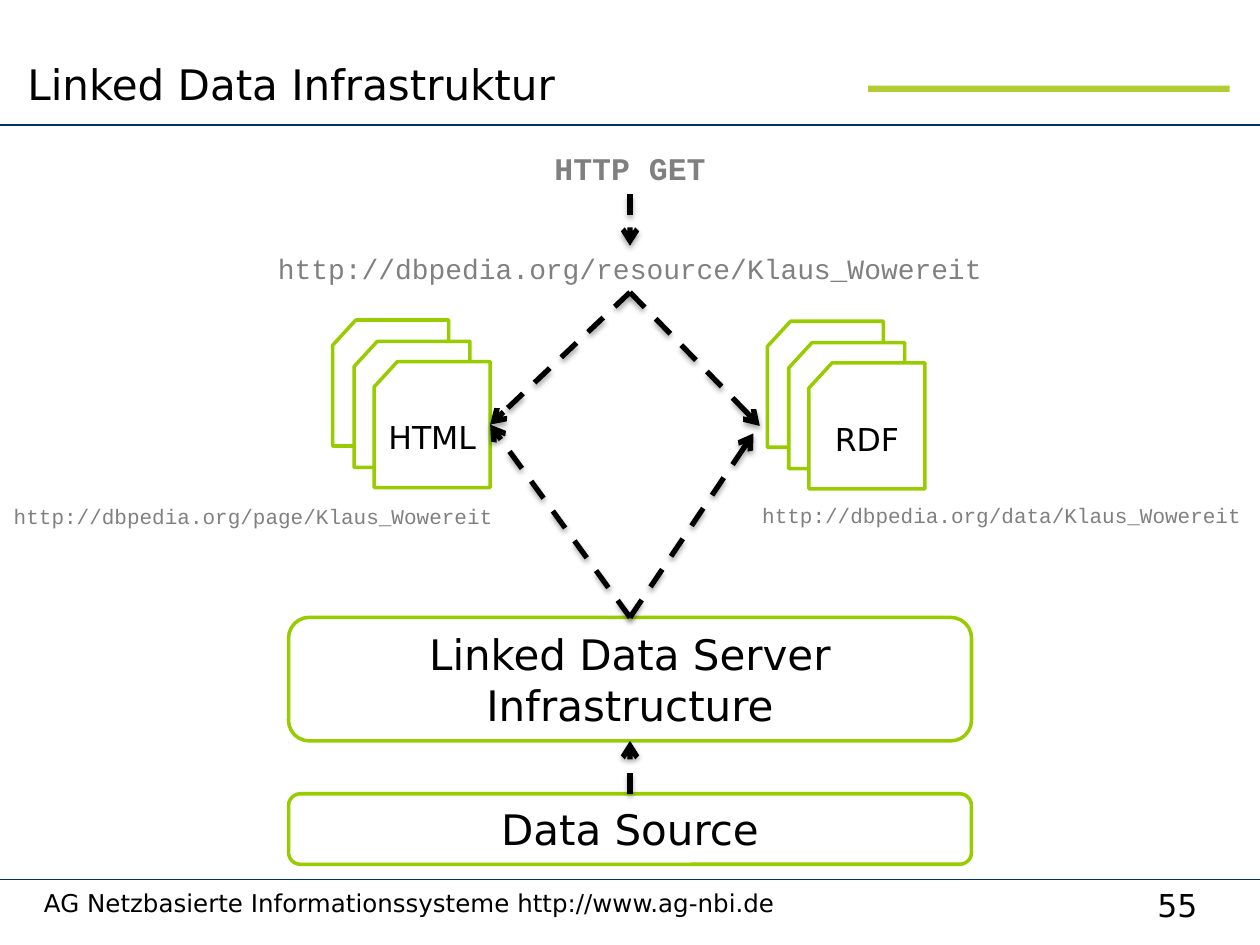
from lxml.etree import SubElement
from pptx import Presentation
from pptx.dml.color import RGBColor
from pptx.enum.dml import MSO_LINE
from pptx.enum.shapes import MSO_CONNECTOR, MSO_SHAPE
from pptx.enum.text import MSO_ANCHOR, PP_ALIGN
from pptx.oxml.ns import qn
from pptx.util import Pt

SCALE = 9144  # EMU per px, 100 px to the inch
COLORS = {"white": "FFFFFF", "black": "000000", "gray": "808080",
          "navy": "003366", "green": "99CC00", "lime": "B2CC33"}
SANS, MONO = "DejaVu Sans", "Courier New"
TOP, LEFT, BOTTOM, RIGHT = range(4)


def px(*sizes):
    return [size * SCALE for size in sizes]


def color(name):
    return RGBColor.from_string(COLORS[name])


class Canvas:
    def __init__(self, slide):
        self.shapes = slide.shapes

    def letter(self, shape, text, size, font=SANS, ink="black",
               align=PP_ALIGN.CENTER, anchor=MSO_ANCHOR.MIDDLE, bold=False):
        frame = shape.text_frame
        frame.word_wrap = True
        frame.vertical_anchor = anchor
        para = frame.paragraphs[0]
        para.text = text
        para.alignment = align
        para.font.name = font
        para.font.size = Pt(size)
        para.font.bold = bold
        para.font.color.rgb = color(ink)

    def label(self, box, text, size, anchor=MSO_ANCHOR.TOP, **style):
        shape = self.shapes.add_textbox(*px(*box))
        self.letter(shape, text, size, anchor=anchor, **style)
        return shape

    def block(self, kind, box, text="", size=24, fill="white", edge="green"):
        shape = self.shapes.add_shape(kind, *px(*box))
        shape.shadow.inherit = False
        shape.fill.solid()
        shape.fill.fore_color.rgb = color(fill)
        if edge:
            shape.line.color.rgb = color(edge)
            shape.line.width = Pt(2)
        else:
            shape.line.fill.background()
        if text:
            self.letter(shape, text, size)
        return shape

    def stack(self, left, top, text):
        """Draw three overlapping cards and return the front one."""
        for back in (33, 16, 0):
            card = self.block(MSO_SHAPE.FLOWCHART_CARD,
                              (left - back, top - back, 92, 100),
                              "" if back else text, 18)
        return card

    def line(self, ends, ink, width):
        """Draw a straight line and return it with its empty effect list."""
        line = self.shapes.add_connector(MSO_CONNECTOR.STRAIGHT, *px(*ends))
        line.line.color.rgb = color(ink)
        line.line.width = Pt(width)
        props = line.line._get_or_add_ln().getparent()
        return line, SubElement(props, qn("a:effectLst"))

    def arrow(self, start, side, end, goal=None):
        """Join start to a (x, y) point, or to side goal of a shape."""
        tip = end if goal is None else (0, 0)
        line, effects = self.line((0, 0, *tip), "black", 3)
        line.begin_connect(start, side)
        if goal is not None:
            line.end_connect(end, goal)
        line.line.dash_style = MSO_LINE.DASH
        SubElement(line.line._get_or_add_ln(), qn("a:tailEnd"), type="arrow")
        shadow = SubElement(effects, qn("a:outerShdw"), blurRad=str(Pt(3.1)),
                            dist=str(Pt(1.8)), dir="5400000", rotWithShape="0")
        tint = SubElement(shadow, qn("a:srgbClr"), val=COLORS["black"])
        SubElement(tint, qn("a:alpha"), val="35000")


def main():
    deck = Presentation()
    deck.slide_width, deck.slide_height = px(1000, 750)
    page = Canvas(deck.slides.add_slide(deck.slide_layouts[6]))

    page.block(MSO_SHAPE.RECTANGLE, (689, 68, 287, 5), fill="lime", edge=None)
    for y in (698, 99):
        page.line((0, y, 1000, y), "navy", 1)
    page.label((894, 698, 81, 40), "55", 18)
    page.label((25, 700, 869, 33),
               "AG Netzbasierte Informationssysteme http://www.ag-nbi.de", 14,
               align=PP_ALIGN.LEFT)
    page.label((12, 0, 670, 91), "Linked Data Infrastruktur", 24,
               align=PP_ALIGN.LEFT, anchor=MSO_ANCHOR.BOTTOM)

    source, server = [
        page.block(MSO_SHAPE.ROUNDED_RECTANGLE, (229, top, 542, high), text)
        for top, high, text in (
            (630, 56, "Data Source"),
            (490, 98, "Linked Data Server Infrastructure"))]
    html = page.stack(297, 287, "HTML")
    page.stack(642, 288, "RDF")

    url, _, _, get = [
        page.label((left, top, 586, high), text, size, font=MONO, ink="gray",
                   bold=bold)
        for left, top, high, text, size, bold in (
            (207, 195, 37, "http://dbpedia.org/resource/Klaus_Wowereit", 16, False),
            (502, 394, 30, "http://dbpedia.org/data/Klaus_Wowereit", 12, False),
            (-92, 395, 30, "http://dbpedia.org/page/Klaus_Wowereit", 12, False),
            (207, 113, 41, "HTTP GET", 18, True))]

    page.arrow(get, BOTTOM, url, TOP)
    page.arrow(url, BOTTOM, html, RIGHT)
    page.arrow(url, BOTTOM, (603, 338))
    page.arrow(server, TOP, html, RIGHT)
    page.arrow(server, TOP, (598, 344))
    page.arrow(source, TOP, server, BOTTOM)

    deck.save("out.pptx")


if __name__ == "__main__":
    main()
